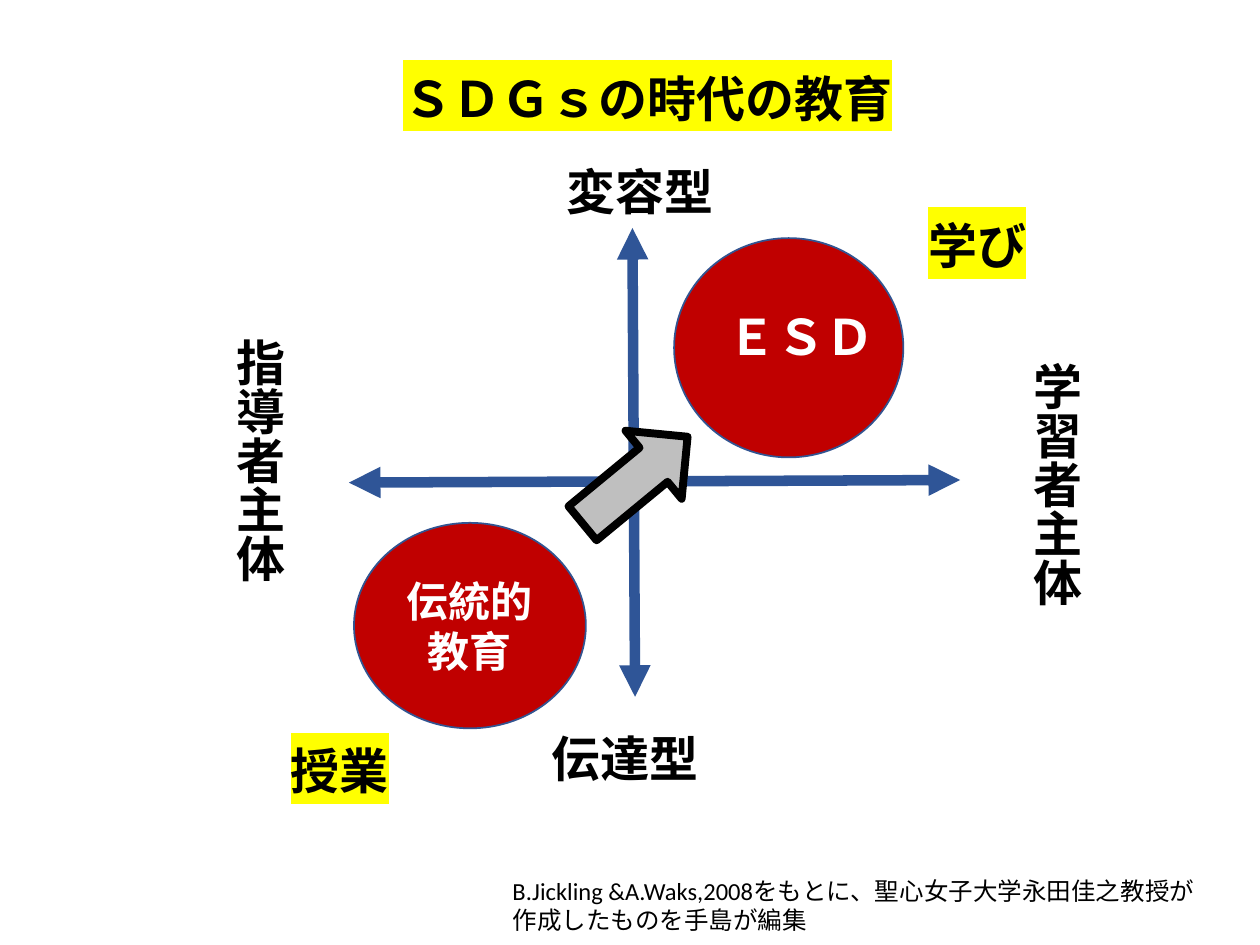
from lxml.etree import SubElement
from pptx import Presentation
from pptx.dml.color import RGBColor
from pptx.enum.shapes import MSO_CONNECTOR as Connector, MSO_SHAPE as Shape
from pptx.enum.text import MSO_ANCHOR as Anchor, MSO_AUTO_SIZE as AutoSize, PP_ALIGN as Align
from pptx.oxml.ns import qn
from pptx.util import Pt

COLORS = {"black": "000000", "white": "FFFFFF", "yellow": "FFFF00", "axis": "2F5597",
          "circle": "C00000", "outline": "325491", "arrow": "BFBFBF"}
JAPANESE, LATIN = "Noto Sans CJK JP", "Calibri"

TITLE = ("ＳＤＧｓの時代の教育", (223.2, 35.3, 308.9, 41.2))
AXES = [(361.4, 130.3, 362.9, 398.2), (548.6, 274.3, 199.4, 275.8)]
AXIS_LABELS = [
    ("変容型", (316.8, 88.6, 105.8, 41.2), False),
    ("伝達型", (308.2, 412.6, 110.2, 41.2), False),
    ("学習者主体", (576, 200.2, 48.2, 196.6), True),
    ("指導者主体", (120.2, 186.5, 48.2, 183.6), True),
]
CIRCLES = [
    (["伝統的", "教育"], (202.3, 298.8, 132.5, 117.4)),
    ([], (385.2, 136.1, 131, 125.3)),
]
ESD = ("ＥＳＤ", (385.2, 171.4, 145.4, 41.2))
SOURCE = (["B.Jickling &A.Waks,2008をもとに、聖心女子大学永田佳之教授が",
           "作成したものを手島が編集"], (285.8, 496.8, 408.2, 41.2))
MARKED_LABELS = [("授業", (159.1, 419.8, 71.3, 41.2)), ("学び", (523.4, 119.5, 71.3, 41.2))]
ARROW = ((324, 249.1, 77.8, 50.4), 320.5)


def rgb(name):
    return RGBColor.from_string(COLORS[name])


def place(box):
    return [Pt(length) for length in box]


def write(frame, lines, size=28, color="black", font=JAPANESE, bold=True,
          align=Align.LEFT, marked=False):
    for index, line in enumerate(lines):
        paragraph = frame.paragraphs[0] if index == 0 else frame.add_paragraph()
        run = paragraph.add_run()
        run.text = line
        paragraph.alignment = align
        paragraph.font.size = Pt(size)
        paragraph.font.bold = bold
        paragraph.font.color.rgb = rgb(color)
        paragraph.font.name = font
        properties = paragraph._p.pPr.find(qn("a:defRPr"))
        SubElement(properties, qn("a:ea")).set("typeface", JAPANESE)
        if marked:
            highlight = SubElement(run._r.get_or_add_rPr(), qn("a:highlight"))
            SubElement(highlight, qn("a:srgbClr")).set("val", COLORS["yellow"])


def add_text(slide, lines, box, wrap=True, vertical=False, **style):
    frame = slide.shapes.add_textbox(*place(box)).text_frame
    frame.word_wrap = wrap
    frame.auto_size = AutoSize.SHAPE_TO_FIT_TEXT
    if vertical:
        frame._txBody.bodyPr.set("vert", "eaVert")
    write(frame, lines, **style)


def add_filled(slide, kind, box, fill, line, width):
    shape = slide.shapes.add_shape(kind, *place(box))
    shape.shadow.inherit = False
    shape.fill.solid()
    shape.fill.fore_color.rgb = rgb(fill)
    shape.line.color.rgb = rgb(line)
    shape.line.width = Pt(width)
    return shape


def add_axis(slide, ends):
    axis = slide.shapes.add_connector(Connector.STRAIGHT, *place(ends))
    axis.line.color.rgb = rgb("axis")
    axis.line.width = Pt(6)
    for end in ("a:headEnd", "a:tailEnd"):
        SubElement(axis.line._get_or_add_ln(), qn(end)).set("type", "triangle")
    SubElement(axis._element.spPr, qn("a:effectLst"))


def main():
    presentation = Presentation()
    presentation.slide_width, presentation.slide_height = Pt(720), Pt(540)
    slide = presentation.slides.add_slide(presentation.slide_layouts[5])

    text, box = TITLE
    title = slide.shapes.title
    title.left, title.top, title.width, title.height = place(box)
    title.text_frame.vertical_anchor = Anchor.TOP
    title.text_frame.word_wrap = True
    title.text_frame.auto_size = AutoSize.SHAPE_TO_FIT_TEXT
    write(title.text_frame, [text], marked=True)

    for ends in AXES:
        add_axis(slide, ends)
    for text, box, vertical in AXIS_LABELS:
        add_text(slide, [text], box, vertical=vertical)
    for lines, box in CIRCLES:
        circle = add_filled(slide, Shape.OVAL, box, "circle", "outline", 1)
        circle.text_frame.vertical_anchor = Anchor.MIDDLE
        write(circle.text_frame, lines, size=24, color="white", align=Align.CENTER)

    text, box = ESD
    add_text(slide, [text], box, color="white", align=Align.CENTER)
    lines, box = SOURCE
    add_text(slide, lines, box, wrap=False, size=14, font=LATIN, bold=False)
    for text, box in MARKED_LABELS:
        add_text(slide, [text], box, wrap=False, font=LATIN, marked=True)

    box, angle = ARROW
    arrow = add_filled(slide, Shape.RIGHT_ARROW, box, "arrow", "black", 4.5)
    arrow.rotation = angle

    presentation.save("out.pptx")


if __name__ == "__main__":
    main()
